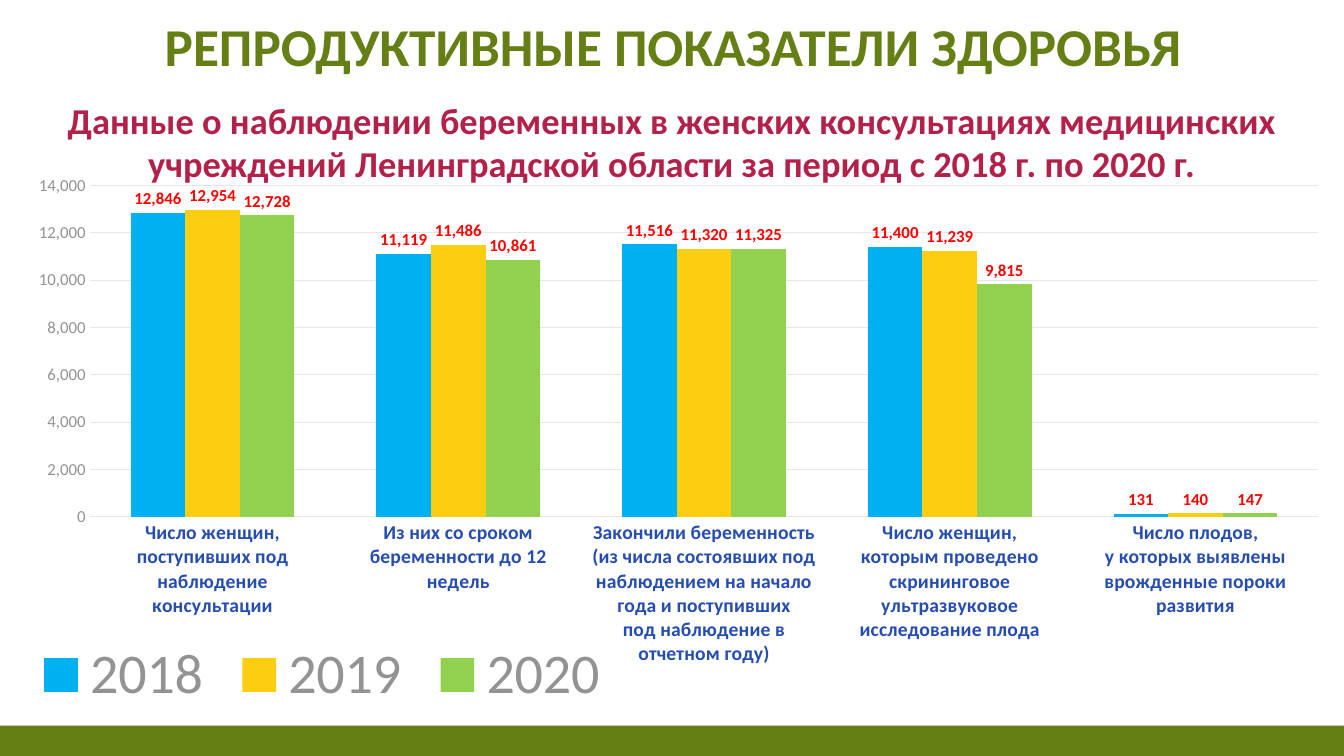
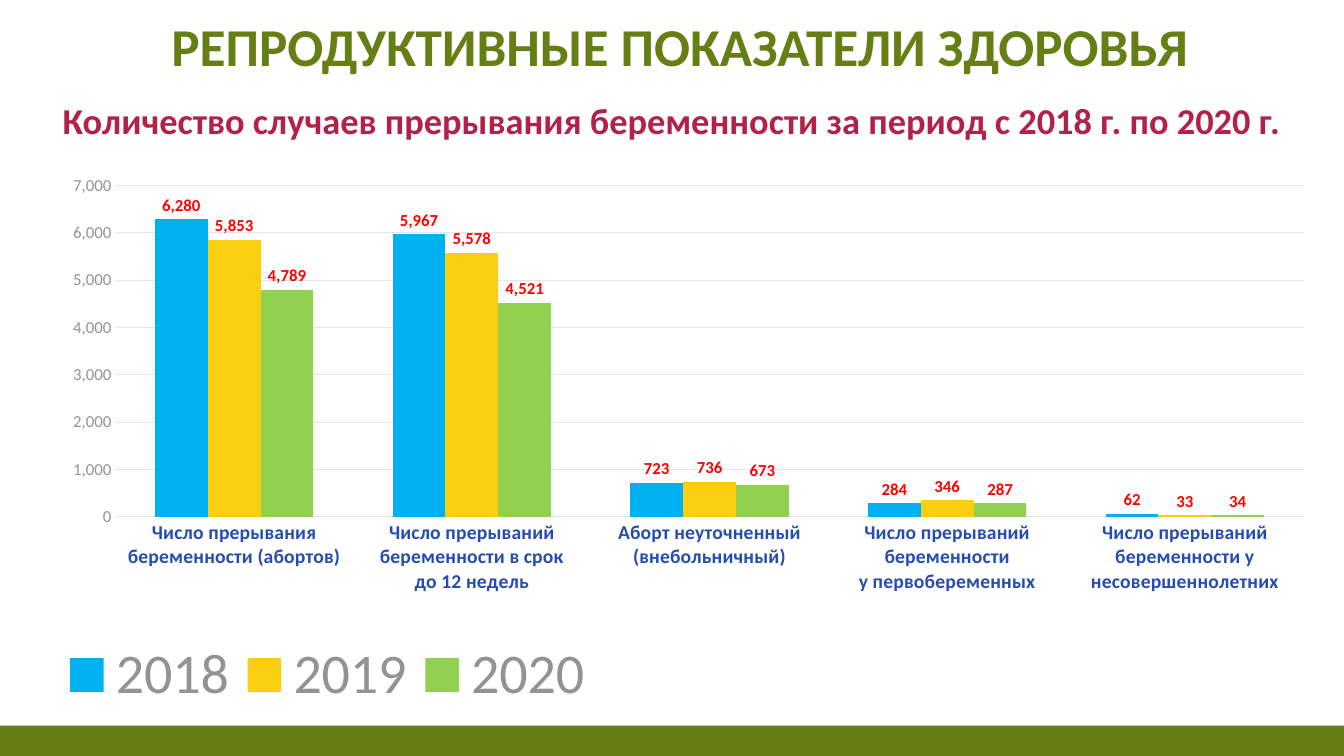
from dataclasses import dataclass

from lxml import etree
from pptx import Presentation
from pptx.chart.chart import Chart
from pptx.chart.data import CategoryChartData
from pptx.dml.color import RGBColor
from pptx.enum.chart import XL_CHART_TYPE, XL_LABEL_POSITION, XL_LEGEND_POSITION, XL_TICK_MARK
from pptx.enum.shapes import MSO_SHAPE
from pptx.enum.text import MSO_ANCHOR, MSO_AUTO_SIZE, PP_ALIGN
from pptx.oxml.ns import qn
from pptx.presentation import Presentation as Deck
from pptx.slide import Slide, SlideLayout
from pptx.text.text import Font, TextFrame
from pptx.util import Inches, Pt

COLUMNS = XL_CHART_TYPE.COLUMN_CLUSTERED
OUTSIDE_END = XL_LABEL_POSITION.OUTSIDE_END
LEGEND_BOTTOM = XL_LEGEND_POSITION.BOTTOM
NO_TICK = XL_TICK_MARK.NONE
RECTANGLE = MSO_SHAPE.RECTANGLE
TOP, BOTTOM = MSO_ANCHOR.TOP, MSO_ANCHOR.BOTTOM
FIXED_SIZE = MSO_AUTO_SIZE.NONE
CENTER = PP_ALIGN.CENTER

FONT = "Calibri"
COLORS = {
    "olive": "657F14",
    "crimson": "B3214B",
    "category": "254CB0",
    "axis": "939393",
    "grid": "E6E6E6",
    "label": "FF0000",
    "chart": "595959",
}
SERIES_COLORS = {"2018": "00B0F0", "2019": "FBCE11", "2020": "92D050"}
NUMBER_FORMAT = "#,##0"
SLIDE_WIDTH, SLIDE_HEIGHT, BAND_HEIGHT = 13.33, 7.5, 0.3
TITLE = "РЕПРОДУКТИВНЫЕ ПОКАЗАТЕЛИ ЗДОРОВЬЯ"
PLOT_LAYOUT = {"x": 0.06, "y": 0.018, "w": 0.926, "h": 0.598}


@dataclass(frozen=True)
class ChartPage:
    subtitle: str
    subtitle_height: float
    title_width: float
    chart_left: float
    chart_width: float
    axis_maximum: int
    axis_step: int
    legend_width: float
    categories: list[str]
    values: dict[str, list[int]]


PAGES = [
    ChartPage(
        subtitle="Данные о наблюдении беременных в женских консультациях медицинских "
        "учреждений Ленинградской области за период с 2018 г. по 2020 г.",
        subtitle_height=0.98,
        title_width=12.6,
        chart_left=0.1,
        chart_width=13.16,
        axis_maximum=14000,
        axis_step=2000,
        legend_width=0.45,
        categories=[
            "Число женщин,\nпоступивших под наблюдение консультации",
            "Из них со сроком беременности до 12 недель",
            "Закончили беременность\n(из числа состоявших под наблюдением на начало "
            "года и поступивших\nпод наблюдение в отчетном году)",
            "Число женщин,\nкоторым проведено скрининговое ультразвуковое исследование плода",
            "Число плодов,\nу которых выявлены врожденные пороки развития",
        ],
        values={
            "2018": [12846, 11119, 11516, 11400, 131],
            "2019": [12954, 11486, 11320, 11239, 140],
            "2020": [12728, 10861, 11325, 9815, 147],
        },
    ),
    ChartPage(
        subtitle="Количество случаев прерывания беременности за период с 2018 г. по 2020 г.",
        subtitle_height=0.54,
        title_width=12.73,
        chart_left=0.38,
        chart_width=12.73,
        axis_maximum=7000,
        axis_step=1000,
        legend_width=0.43,
        categories=[
            "Число прерывания беременности (абортов)",
            "Число прерываний беременности в срок\nдо 12 недель",
            "Аборт неуточненный (внебольничный)",
            "Число прерываний беременности\nу первобеременных",
            "Число прерываний беременности у несовершеннолетних",
        ],
        values={
            "2018": [6280, 5967, 723, 284, 62],
            "2019": [5853, 5578, 736, 346, 33],
            "2020": [4789, 4521, 673, 287, 34],
        },
    ),
]


def format_font(font: Font, *, size: float, color: str, bold: bool = False) -> None:
    font.name = FONT
    font.size = Pt(size)
    font.bold = bold
    font.color.rgb = RGBColor.from_string(COLORS[color])


def write_text(frame: TextFrame, text: str, *, size: float, color: str,
               anchor: MSO_ANCHOR = TOP) -> None:
    frame.word_wrap = True
    frame.auto_size = FIXED_SIZE
    frame.vertical_anchor = anchor
    para = frame.paragraphs[0]
    para.alignment = CENTER
    span = para.add_run()
    span.text = text
    format_font(span.font, size=size, color=color, bold=True)


def add_layout_band(slide: Slide, layout: SlideLayout) -> None:
    """Draw the bottom band and move it to the layout shared by all slides."""
    band = slide.shapes.add_shape(
        RECTANGLE, 0, Inches(SLIDE_HEIGHT - BAND_HEIGHT),
        Inches(SLIDE_WIDTH), Inches(BAND_HEIGHT))
    band.shadow.inherit = False
    band.fill.solid()
    band.fill.fore_color.rgb = RGBColor.from_string(COLORS["olive"])
    band.line.fill.background()
    layout.element.find(".//" + qn("p:spTree")).append(band.element)


def set_layout(chart: Chart, tag: str, index: int, box: dict[str, float],
               inner: bool = False) -> None:
    """Place the plot area or legend by fractions of the chart."""
    parent = chart.element.find(".//" + qn(tag))
    for old in parent.findall(qn("c:layout")):
        parent.remove(old)
    layout = etree.Element(qn("c:layout"))
    manual = etree.SubElement(layout, qn("c:manualLayout"))
    settings = [("layoutTarget", "inner")] if inner else []
    settings += [("xMode", "edge"), ("yMode", "edge")]
    settings += [(name, str(value)) for name, value in box.items()]
    for name, value in settings:
        etree.SubElement(manual, qn("c:" + name)).set("val", value)
    parent.insert(index, layout)


def format_axes(chart: Chart, page: ChartPage) -> None:
    for axis in (chart.category_axis, chart.value_axis):
        axis.major_tick_mark = axis.minor_tick_mark = NO_TICK
        axis.format.line.fill.background()
    format_font(chart.category_axis.tick_labels.font, size=14, color="category", bold=True)
    axis = chart.value_axis
    axis.minimum_scale = 0
    axis.maximum_scale = page.axis_maximum
    axis.major_unit = page.axis_step
    format_font(axis.tick_labels.font, size=12, color="axis")
    axis.tick_labels.number_format = NUMBER_FORMAT
    axis.tick_labels.number_format_is_linked = False
    grid = axis.major_gridlines.format.line
    grid.width = Pt(0.75)
    grid.color.rgb = RGBColor.from_string(COLORS["grid"])


def add_column_chart(slide: Slide, page: ChartPage) -> None:
    data = CategoryChartData(number_format=NUMBER_FORMAT)
    data.categories = page.categories
    for year, values in page.values.items():
        data.add_series(year, values)
    chart = slide.shapes.add_chart(
        COLUMNS, Inches(page.chart_left), Inches(1.74),
        Inches(page.chart_width), Inches(5.5), data).chart
    chart.has_title = False
    format_font(chart.font, size=10, color="chart")
    format_axes(chart, page)

    # Columns and their value labels
    plot = chart.plots[0]
    plot.gap_width = 150
    plot.overlap = 0
    plot.vary_by_categories = False
    for series in plot.series:
        series.format.fill.solid()
        series.format.fill.fore_color.rgb = RGBColor.from_string(SERIES_COLORS[series.name])
        labels = series.data_labels
        labels.show_value = True
        labels.position = OUTSIDE_END
        labels.number_format = NUMBER_FORMAT
        labels.number_format_is_linked = False
        format_font(labels.font, size=12, color="label", bold=True)

    # Legend at the lower left
    chart.has_legend = True
    chart.legend.position = LEGEND_BOTTOM
    chart.legend.include_in_layout = False
    format_font(chart.legend.font, size=40, color="axis")
    set_layout(chart, "c:plotArea", 0, PLOT_LAYOUT, inner=True)
    set_layout(chart, "c:legend", 1,
               {"x": 0.01, "y": 0.84, "w": page.legend_width, "h": 0.13})


def add_page(deck: Deck, layout: SlideLayout, page: ChartPage) -> Slide:
    slide = deck.slides.add_slide(layout)
    title = slide.shapes.title
    title.left, title.top = Inches(0.38), Inches(0.07)
    title.width, title.height = Inches(page.title_width), Inches(0.75)
    write_text(title.text_frame, TITLE, size=38, color="olive", anchor=BOTTOM)
    add_column_chart(slide, page)
    box = slide.shapes.add_textbox(
        Inches(0.22), Inches(0.92), Inches(12.9), Inches(page.subtitle_height))
    write_text(box.text_frame, page.subtitle, size=26, color="crimson")
    return slide


def main() -> None:
    deck = Presentation()
    deck.slide_width, deck.slide_height = Inches(SLIDE_WIDTH), Inches(SLIDE_HEIGHT)
    layout = deck.slide_layouts[5]
    slides = [add_page(deck, layout, page) for page in PAGES]
    add_layout_band(slides[0], layout)
    deck.save("out.pptx")


if __name__ == "__main__":
    main()
